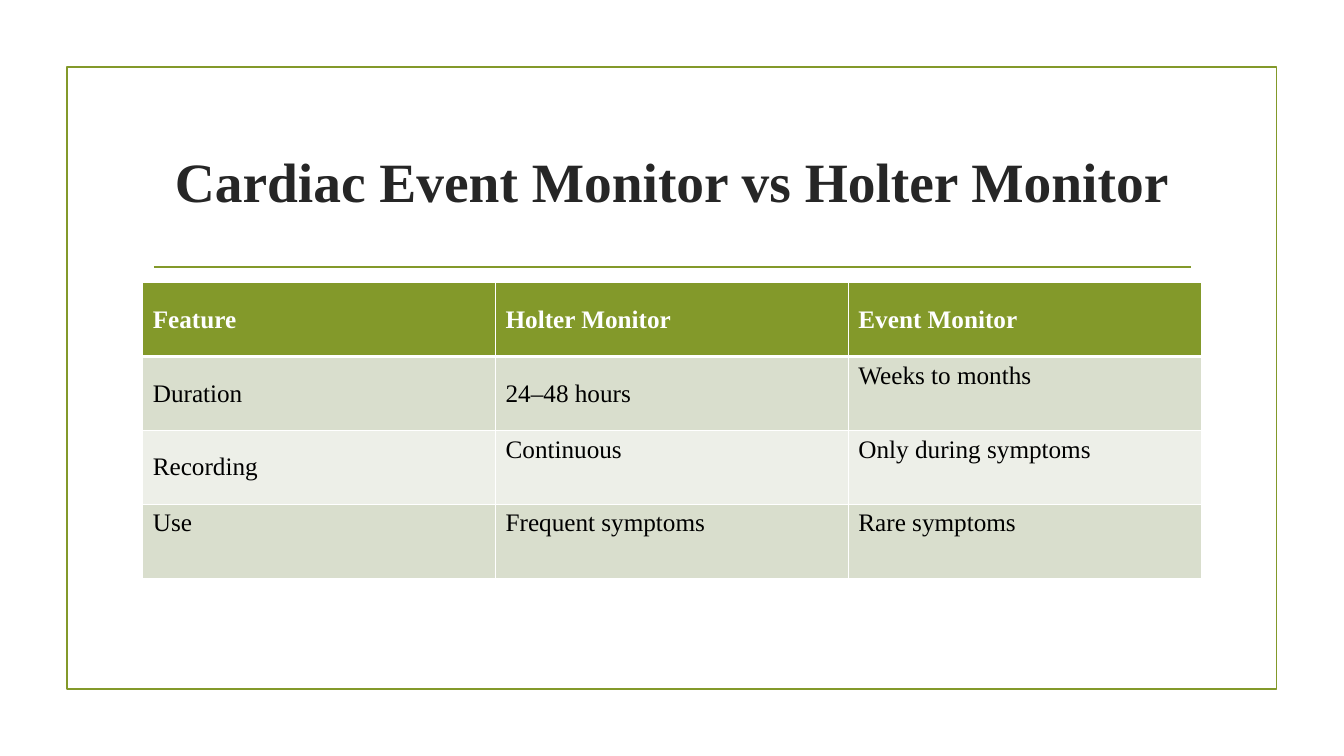
import pptx
import pptx.dml.color
import pptx.enum.shapes
import pptx.enum.text
import pptx.oxml
import pptx.oxml.ns
import pptx.util

Pt = pptx.util.Pt
ANCHOR = pptx.enum.text.MSO_ANCHOR
ALIGN = pptx.enum.text.PP_ALIGN

COLORS = {
    "olive": "83992A",
    "title": "262626",
    "body": "000000",
    "white": "FFFFFF",
    "band_dark": "D9DECD",
    "band_light": "EDEFE8",
}

COMPARISON = [
    ["Feature", "Holter Monitor", "Event Monitor"],
    ["Duration", "24–48 hours", "Weeks to months"],
    ["Recording", "Continuous", "Only during symptoms"],
    ["Use", "Frequent symptoms", "Rare symptoms"],
]


def rgb(name):
    return pptx.dml.color.RGBColor.from_string(COLORS[name])


def write(frame, text, size=18, color="body", bold=False,
          align=ALIGN.LEFT, anchor=ANCHOR.TOP):
    frame.word_wrap = True
    frame.vertical_anchor = anchor
    paragraph = frame.paragraphs[0]
    paragraph.alignment = align
    run = paragraph.add_run()
    run.text = text
    run.font.name = "Times New Roman"
    run.font.size = Pt(size)
    run.font.bold = bold
    run.font.color.rgb = rgb(color)


class ComparisonSlide:
    line_width = 1.25
    accent = "olive"

    def __init__(self, slide):
        self.shapes = slide.shapes

    def frame(self, left, top, width, height):
        border = self.shapes.add_shape(
            pptx.enum.shapes.MSO_SHAPE.RECTANGLE,
            Pt(left), Pt(top), Pt(width), Pt(height))
        border.shadow.inherit = False
        border.fill.background()
        border.line.color.rgb = rgb(self.accent)
        border.line.width = Pt(self.line_width)

    def rule(self, left, right, y):
        divider = self.shapes.add_connector(
            pptx.enum.shapes.MSO_CONNECTOR.STRAIGHT,
            Pt(left), Pt(y), Pt(right), Pt(y))
        divider.line.color.rgb = rgb(self.accent)
        divider.line.width = Pt(self.line_width)
        divider._element.spPr.append(pptx.oxml.parse_xml(
            f"<a:effectLst {pptx.oxml.ns.nsdecls('a')}/>"))

    def title(self, text, left, top, width, height):
        heading = self.shapes.add_textbox(
            Pt(left), Pt(top), Pt(width), Pt(height))
        write(heading.text_frame, text, size=39.6, color="title", bold=True,
              align=ALIGN.CENTER, anchor=ANCHOR.MIDDLE)

    def cell_borders(self, cell, **widths):
        properties = cell._tc.get_or_add_tcPr()
        for position, side in enumerate("LRTB"):
            properties.insert(position, pptx.oxml.parse_xml(
                f"<a:ln{side} {pptx.oxml.ns.nsdecls('a')} "
                f'w="{Pt(widths.get(side, 1))}"><a:solidFill>'
                f'<a:srgbClr val="{COLORS["white"]}"/>'
                f"</a:solidFill></a:ln{side}>"))

    def table(self, rows, left, top, column_width, row_height):
        columns = len(rows[0])
        grid = self.shapes.add_table(
            len(rows), columns, Pt(left), Pt(top),
            Pt(column_width * columns), Pt(row_height * len(rows))).table
        for column in grid.columns:
            column.width = Pt(column_width)
        for r, texts in enumerate(rows):
            grid.rows[r].height = Pt(row_height)
            header = r == 0
            band = "band_dark" if r % 2 else "band_light"
            for c, text in enumerate(texts):
                cell = grid.cell(r, c)
                cell.fill.solid()
                cell.fill.fore_color.rgb = rgb(self.accent if header else band)
                write(cell.text_frame, text, bold=header,
                      color="white" if header else "body")
                cell.vertical_anchor = (
                    ANCHOR.MIDDLE if r + c < columns else ANCHOR.TOP)
                self.cell_borders(cell, T=3 if r == 1 else 1,
                                  B=3 if header else 1)


def main():
    deck = pptx.Presentation()
    deck.slide_width, deck.slide_height = Pt(960), Pt(540)
    page = ComparisonSlide(deck.slides.add_slide(deck.slide_layouts[6]))
    page.frame(47.75, 48, 864, 444)
    page.rule(110, 850.5, 190.8)
    page.title("Cardiac Event Monitor vs Holter Monitor", 102, 77, 756, 103)
    page.table(COMPARISON, 102, 201.9, 252, 52.8)
    deck.save("out.pptx")


if __name__ == "__main__":
    main()
